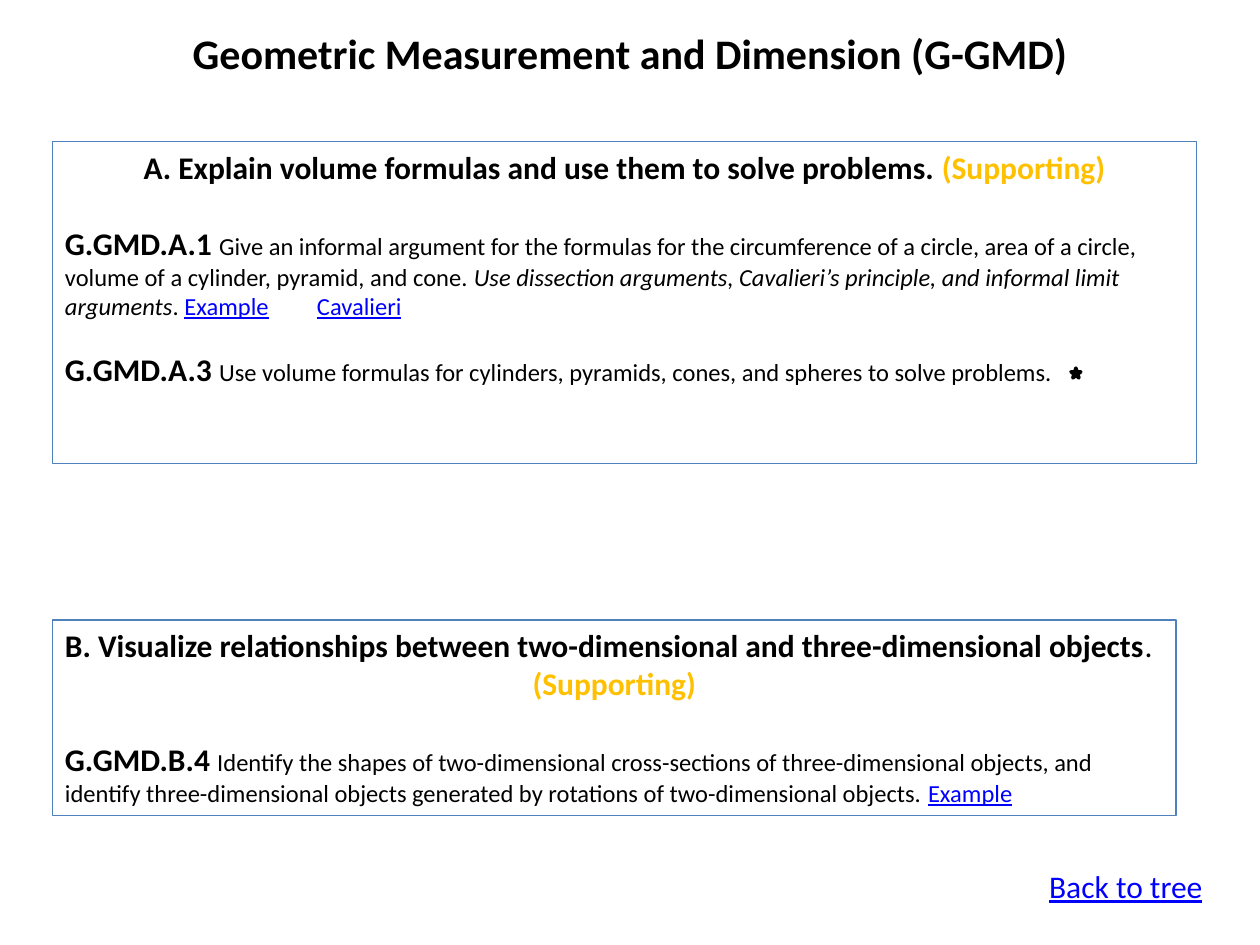
from pptx import Presentation
from pptx.dml.color import RGBColor
from pptx.enum import shapes, text
from pptx.util import Cm, Pt

COLORS = {"ink": "000000", "level": "FFC000", "link": "0000FF", "border": "4F81BD"}
STYLES = {
    "title": ("ink", {"size": Pt(24), "bold": True}),
    "heading": ("ink", {"size": Pt(18), "bold": True}),
    "stop": ("ink", {"size": Pt(18), "bold": False}),
    "level": ("level", {"size": Pt(18), "bold": True}),
    "body": ("ink", {"size": Pt(14), "bold": False}),
    "note": ("ink", {"size": Pt(14), "bold": False, "italic": True}),
    "link": ("link", {"size": Pt(14), "bold": False, "underline": True}),
    "back": ("link", {"size": Pt(18), "bold": False, "underline": True}),
}
CENTER, LEFT = text.PP_ALIGN.CENTER, text.PP_ALIGN.LEFT


def color(name):
    return RGBColor.from_string(COLORS[name])


def write(frame, paragraphs, wrap=True):
    """Fill a frame with (alignment, points before, [(style, words), ...]) paragraphs."""
    frame.word_wrap = wrap
    frame.vertical_anchor = text.MSO_ANCHOR.TOP
    for index, (alignment, before, spans) in enumerate(paragraphs):
        para = frame.add_paragraph() if index else frame.paragraphs[0]
        para.alignment = alignment
        para.space_before = Pt(before)
        for style, words in spans:
            span = para.add_run()
            span.text = words
            color_name, formats = STYLES[style]
            span.font.name = "Calibri"
            span.font.color.rgb = color(color_name)
            for name, value in formats.items():
                setattr(span.font, name, value)


deck = Presentation()
deck.slide_width, deck.slide_height = Cm(25.4), Cm(19.05)
page = deck.slides.add_slide(deck.slide_layouts[5])

title = page.shapes.title
title.left, title.top, title.width, title.height = Cm(0.85), Cm(0.42), Cm(23.7), Cm(1.28)
write(title.text_frame, [
    (CENTER, 0, [("title", "Geometric Measurement and Dimension (G-GMD)")]),
])

# Standard clusters: top, width, height, paragraphs
clusters = [
    (2.85, 23.06, 6.5, [
        (CENTER, 0, [
            ("heading", "A. Explain volume formulas and use them to solve problems. "),
            ("level", "(Supporting)"),
        ]),
        (LEFT, 22, [
            ("heading", "G.GMD.A.1 "),
            ("body", "Give an informal argument for the formulas for the circumference of a circle, "
                     "area of a circle, volume of a cylinder, pyramid, and cone. "),
            ("note", "Use dissection arguments, Cavalieri’s principle, and informal limit arguments"),
            ("body", ". "),
            ("link", "Example"),
            ("body", "\t"),
            ("link", "Cavalieri"),
        ]),
        (LEFT, 17, [
            ("heading", "G.GMD.A.3 "),
            ("body", "Use volume formulas for cylinders, pyramids, cones, and spheres "
                     "to solve problems."),
        ]),
    ]),
    (12.5, 22.65, 3.94, [
        (LEFT, 0, [
            ("heading", "B. Visualize relationships between two-dimensional and "
                        "three-dimensional objects"),
            ("stop", "."),
        ]),
        (CENTER, 0, [("level", "(Supporting)")]),
        (LEFT, 22, [
            ("heading", "G.GMD.B.4 "),
            ("body", "Identify the shapes of two-dimensional cross-sections of three-dimensional "
                     "objects, and identify three-dimensional objects generated by rotations "
                     "of two-dimensional objects. "),
            ("link", "Example"),
        ]),
    ]),
]
for top, width, height, paragraphs in clusters:
    box = page.shapes.add_shape(
        shapes.MSO_SHAPE.RECTANGLE, Cm(1.06), Cm(top), Cm(width), Cm(height))
    box.shadow.inherit = False
    box.fill.background()
    box.line.color.rgb = color("border")
    box.line.width = Pt(0.75)
    write(box.text_frame, paragraphs)

star = page.shapes.add_shape(
    shapes.MSO_SHAPE.STAR_5_POINT, Cm(21.59), Cm(7.42), Cm(0.2), Cm(0.2))
star.shadow.inherit = False
star.fill.solid()
star.fill.fore_color.rgb = color("ink")
star.line.color.rgb = color("ink")
star.line.width = Pt(2)

back = page.shapes.add_textbox(Cm(20.9), Cm(17.35), Cm(3.63), Cm(1.03))
write(back.text_frame, [(LEFT, 0, [("back", "Back to tree")])], wrap=False)

deck.save("out.pptx")
